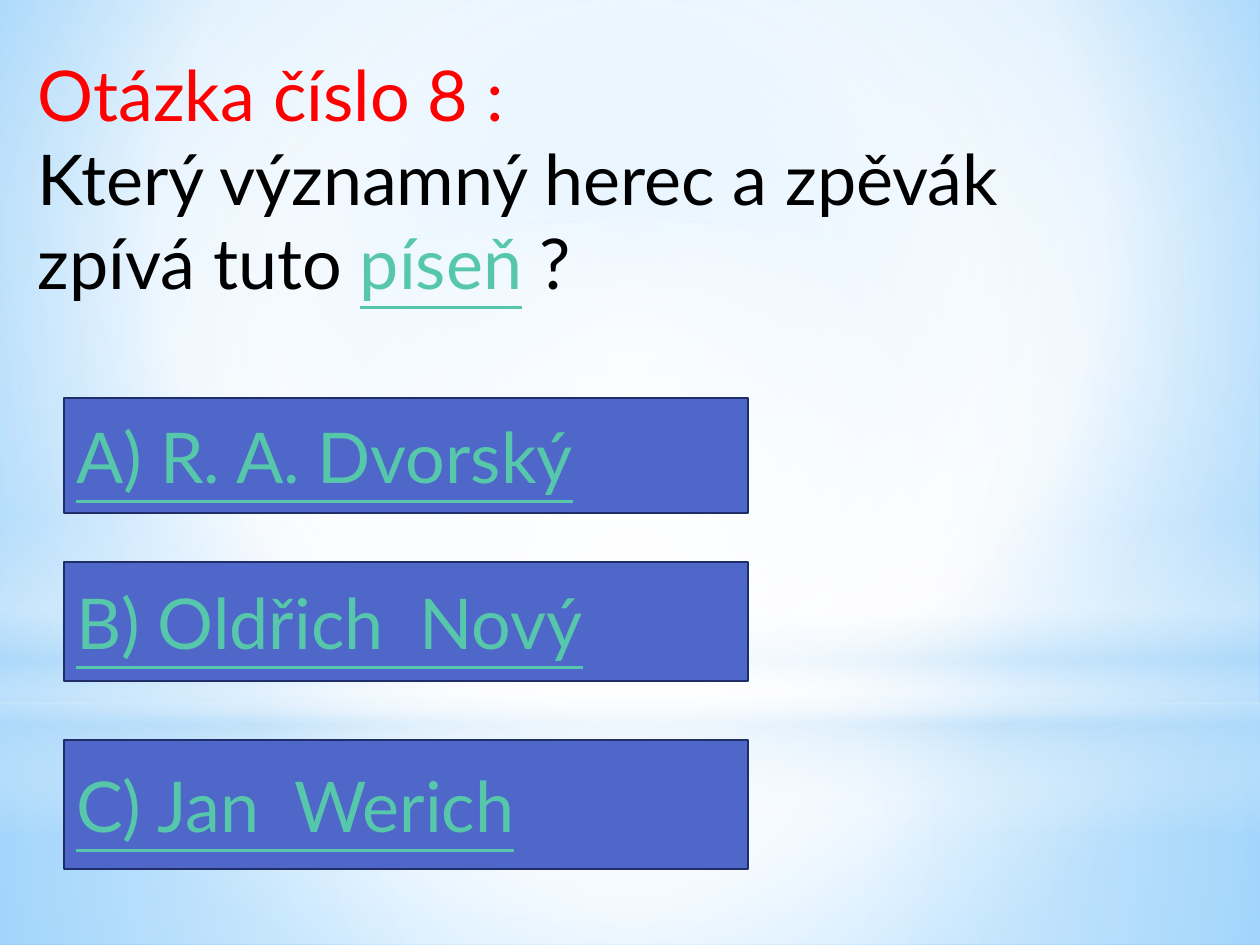
from pptx import Presentation
from pptx.dml.color import RGBColor
from pptx.enum import shapes, text
from pptx.oxml import ns, parse_xml
from pptx.util import Pt

COLORS = {
    "white": "FFFFFF", "sky": "B4DCFA", "light": "9ED5FF", "deep": "5BB9FF",
    "red": "FF0000", "black": "000000", "link": "56C7AA",
    "button": "4E67C8", "border": "1F2E69",
}
CENTER = (50, 50, 50, 50)


def paint_gradient(fill, element, stops, focus=None):
    """Stops are (position %, colour, opacity %); no focus means top to bottom."""
    fill.gradient()
    marks = "".join(
        f'<a:gs pos="{pos * 1000}"><a:srgbClr val="{COLORS[color]}">'
        f'<a:alpha val="{alpha * 1000}"/></a:srgbClr></a:gs>'
        for pos, color, alpha in stops)
    shade = '<a:lin ang="5400000" scaled="0"/>'
    if focus:
        left, top, right, bottom = (side * 1000 for side in focus)
        shade = (f'<a:path path="circle"><a:fillToRect l="{left}" t="{top}" '
                 f'r="{right}" b="{bottom}"/></a:path>')
    old = element.find(".//" + ns.qn("a:gradFill"))
    old.getparent().replace(old, parse_xml(
        f'<a:gradFill {ns.nsdecls("a")} rotWithShape="1">'
        f'<a:gsLst>{marks}</a:gsLst>{shade}</a:gradFill>'))


def style_span(span, color, underline=False):
    span.font.name = "Lato"
    span.font.size = Pt(40)
    span.font.color.rgb = RGBColor.from_string(COLORS[color])
    span.font.underline = underline


deck = Presentation()
deck.slide_width, deck.slide_height = Pt(720), Pt(540)
page = deck.slides.add_slide(deck.slide_layouts[5])

# Background and its translucent glow layers
paint_gradient(page.background.fill, page.element,
               [(0, "light", 100), (60, "white", 100), (100, "deep", 100)],
               (20, 10, 20, 60))
RECT, OVAL = shapes.MSO_SHAPE.RECTANGLE, shapes.MSO_SHAPE.OVAL
layers = [
    (RECT, 401.76, 138.24, CENTER,
     [(0, "white", 91), (37, "white", 76), (100, "sky", 79)]),
    (RECT, 0, 401.76, CENTER,
     [(0, "white", 89), (48, "white", 62), (100, "sky", 79)]),
    (RECT, 296.64, 180, None,
     [(0, "white", 0), (29, "white", 30), (45, "sky", 40),
      (55, "white", 26), (65, "sky", 60), (100, "white", 0)]),
    (OVAL, 126, 401.76, CENTER, [(0, "white", 100), (56, "white", 0)]),
]
for kind, top, height, focus, stops in layers:
    layer = page.shapes.add_shape(kind, 0, Pt(top), Pt(720), Pt(height))
    layer.shadow.inherit = False
    layer.line.fill.background()
    paint_gradient(layer.fill, layer.element, stops, focus)

# Question, raised above the glow layers
title = page.shapes.title
title.element.getparent().append(title.element)
title.left, title.top, title.width, title.height = Pt(14.4), Pt(26), Pt(680), Pt(201)
frame = title.text_frame
frame.word_wrap = True
frame.auto_size = text.MSO_AUTO_SIZE.NONE
frame.vertical_anchor = text.MSO_ANCHOR.TOP
para = frame.paragraphs[0]
para.alignment = text.PP_ALIGN.LEFT
question = [
    [("Otázka číslo 8 :", "red")],
    [("Který významný herec a zpěvák ", "black")],
    [("zpívá tuto ", "black"), ("píseň", "link"), (" ?", "black")],
]
for number, line in enumerate(question):
    if number:
        para.add_line_break()
    for words, color in line:
        span = para.add_run()
        span.text = words
        style_span(span, color, color == "link")

# Answer buttons
answers = [
    ("A) R. A. Dvorský", 227.5, 65.5),
    ("B) Oldřich  Nový", 321, 68),
    ("C) Jan  Werich", 423, 73.5),
]
for words, top, height in answers:
    box = page.shapes.add_shape(RECT, Pt(36.5), Pt(top), Pt(391), Pt(height))
    box.shadow.inherit = False
    box.fill.solid()
    box.fill.fore_color.rgb = RGBColor.from_string(COLORS["button"])
    box.line.color.rgb = RGBColor.from_string(COLORS["border"])
    box.line.width = Pt(1.25)
    box.text_frame.text = words
    box.text_frame.vertical_anchor = text.MSO_ANCHOR.MIDDLE
    para = box.text_frame.paragraphs[0]
    para.alignment = text.PP_ALIGN.LEFT
    style_span(para.runs[0], "link", True)

deck.save("out.pptx")
